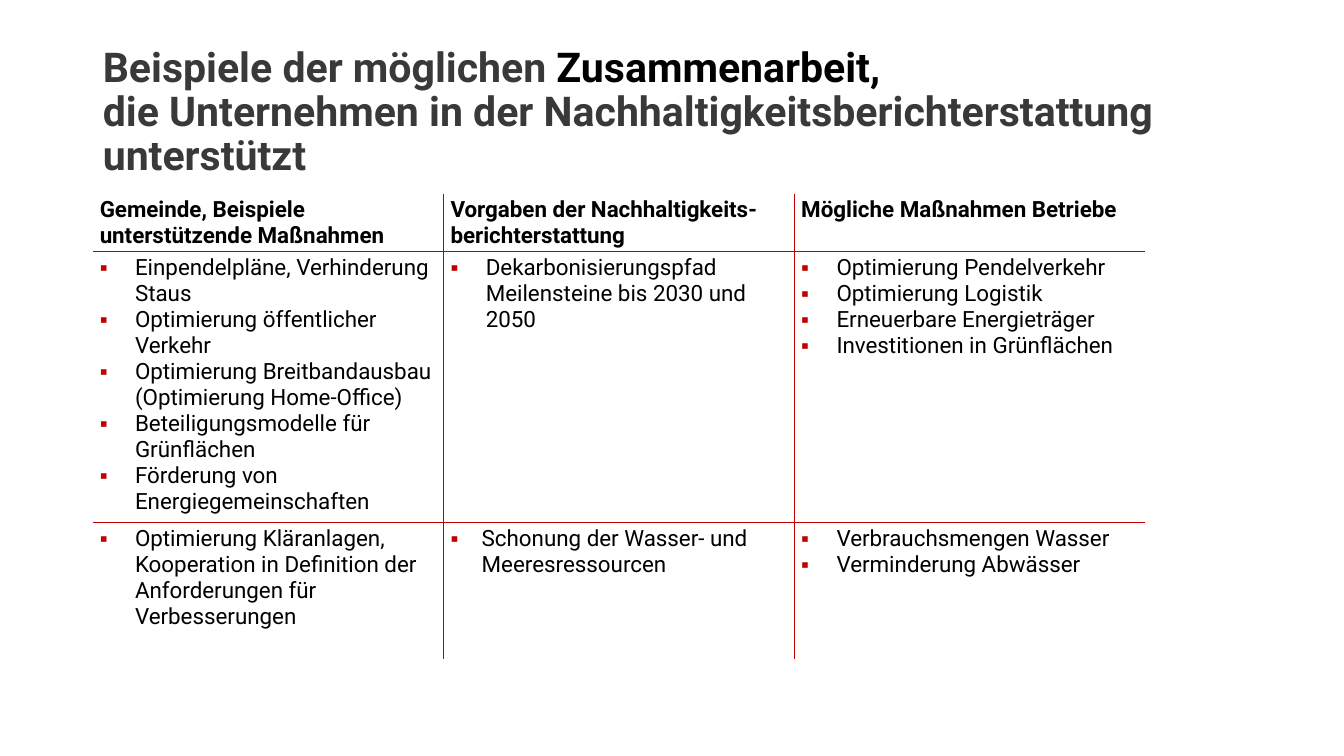
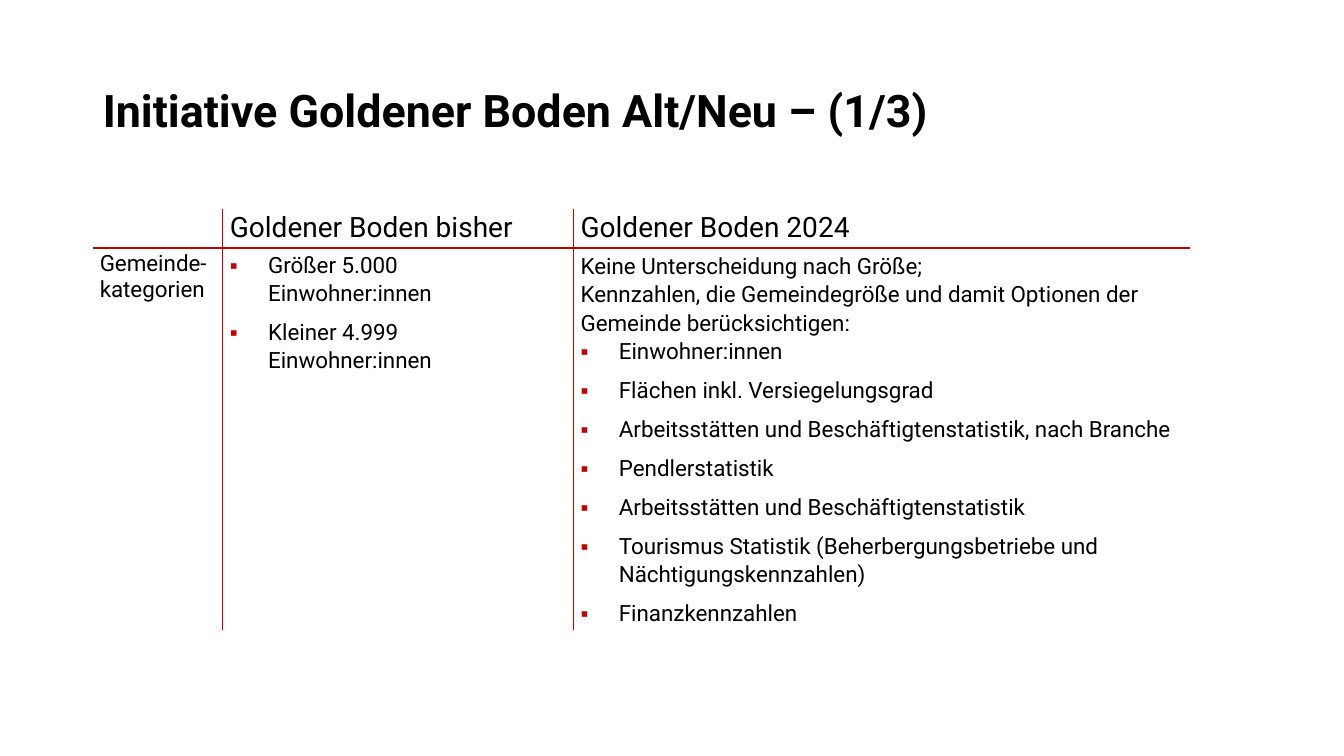
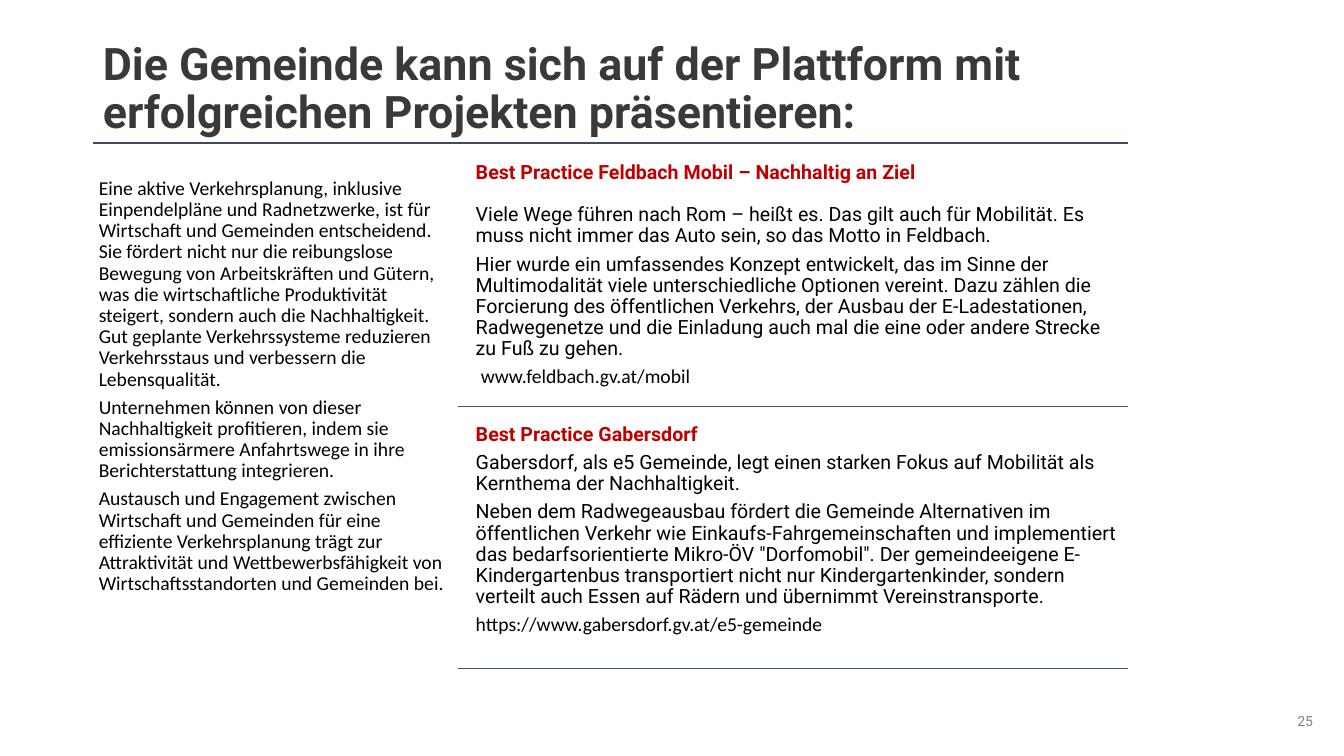
import dataclasses
import functools

import lxml.etree
import pptx
import pptx.dml.color
import pptx.enum.shapes
import pptx.enum.text
import pptx.oxml.ns
import pptx.util

RGB = pptx.dml.color.RGBColor
BLACK = RGB(0x00, 0x00, 0x00)
DARK = RGB(0x3B, 0x38, 0x38)
RED = RGB(0xC0, 0x00, 0x00)
GREY = RGB(0x80, 0x80, 0x80)
SLATE = RGB(0x3E, 0x4C, 0x60)
BLUE = RGB(0x44, 0x54, 0x6A)

WIDE = pptx.util.Inches(13.33)
HIGH = pptx.util.Inches(7.5)
LEFT = 6.9  # shared left edge, in percent of the width
ANCHOR = pptx.enum.text.MSO_ANCHOR
ALIGN = pptx.enum.text.PP_ALIGN
qn = pptx.oxml.ns.qn


@dataclasses.dataclass(frozen=True)
class Para:
    text: str
    size: float = 16
    color: RGB = BLACK
    bold: bool = False
    font: str = "Roboto"
    lead: float = 1
    after: float = 0
    indent: float = 0
    bullet: bool = False
    align: ALIGN = ALIGN.LEFT
    accent: str = ""  # closing words in black


@dataclasses.dataclass(frozen=True)
class Box:
    """Place in percent of the slide's width and height."""
    left: float
    top: float
    width: float
    height: float

    def place(self) -> tuple:
        return across(self.left), down(self.top), across(self.width), down(self.height)


@dataclasses.dataclass(frozen=True)
class Grid:
    top: float
    cols: tuple
    rows: tuple
    cells: tuple


def across(share: float) -> int:
    return round(WIDE * share / 100)


def down(share: float) -> int:
    return round(HIGH * share / 100)


# Paragraph styles
Head = functools.partial(Para, bold=True, lead=0.9)
Point = functools.partial(Para, bullet=True, indent=0.35)
Loose = functools.partial(Para, bullet=True, indent=0.38, lead=1.07, after=8)
Note = functools.partial(Para, size=14, lead=0.9, after=5)
Plain = functools.partial(Note, font="Calibri")
Case = functools.partial(Note, color=RED, bold=True)


def mark(par, indent: float, bullet: bool) -> None:
    props = par._p.get_or_add_pPr()
    step = pptx.util.Inches(indent)
    props.set("marL", str(step))
    if bullet:
        props.set("indent", str(-step))
        tint = lxml.etree.SubElement(props, qn("a:buClr"))
        lxml.etree.SubElement(tint, qn("a:srgbClr"), val=str(RED))
        lxml.etree.SubElement(props, qn("a:buFont"), typeface="Arial")
        lxml.etree.SubElement(props, qn("a:buChar"), char="▪")


def write(frame, paras: tuple) -> None:
    for num, item in enumerate(paras):
        par = frame.add_paragraph() if num else frame.paragraphs[0]
        par.text = item.text
        if item.accent:
            par.add_run().text = item.accent
        if item.indent:
            mark(par, item.indent, item.bullet)
        par.alignment = item.align
        par.line_spacing = item.lead
        par.space_after = pptx.util.Pt(item.after)
        for pos, run in enumerate(par.runs):
            run.font.size = pptx.util.Pt(item.size)
            run.font.name = item.font
            run.font.bold = item.bold
            run.font.color.rgb = BLACK if pos else item.color


def start(deck, top: float, *paras: Para):
    """Add a title-only slide with its title set."""
    slide = deck.slides.add_slide(deck.slide_layouts[5])
    head = slide.shapes.title
    head.left, head.top, head.width, head.height = Box(LEFT, top, 79.75, 19.33).place()
    frame = head.text_frame
    frame.auto_size = pptx.enum.text.MSO_AUTO_SIZE.NONE
    frame.vertical_anchor = ANCHOR.MIDDLE
    write(frame, paras)
    return slide


def text(slide, box: Box, paras: tuple, inset: float = 0.06, anchor=ANCHOR.TOP) -> None:
    frame = slide.shapes.add_textbox(*box.place()).text_frame
    frame.word_wrap = True
    frame.vertical_anchor = anchor
    frame.margin_left = frame.margin_right = pptx.util.Inches(inset)
    frame.margin_top = frame.margin_bottom = pptx.util.Inches(inset)
    write(frame, paras)


def rule(slide, left: float, top: float, color: RGB) -> None:
    line = slide.shapes.add_connector(
        pptx.enum.shapes.MSO_CONNECTOR.STRAIGHT,
        across(left), down(top), across(83.95), down(top))
    line.line.color.rgb = color
    line.line.width = pptx.util.Pt(1)
    lxml.etree.SubElement(line._element.spPr, qn("a:effectLst"))


def edge(cell, sides: dict) -> None:
    props = cell._tc.get_or_add_tcPr()
    for side, shown in sides.items():
        line = lxml.etree.SubElement(props, qn("a:ln" + side), w=str(pptx.util.Pt(1)))
        if shown:
            fill = lxml.etree.SubElement(line, qn("a:solidFill"))
            lxml.etree.SubElement(fill, qn("a:srgbClr"), val=str(RED))
        else:
            lxml.etree.SubElement(line, qn("a:noFill"))


def table(slide, grid: Grid) -> None:
    """Draw a table ruled only between its cells."""
    wide, high = len(grid.cols), len(grid.rows)
    box = Box(LEFT, grid.top, sum(grid.cols), sum(grid.rows))
    tab = slide.shapes.add_table(high, wide, *box.place()).table
    tab.first_row = tab.horz_banding = False
    for col, share in zip(tab.columns, grid.cols):
        col.width = across(share)
    for row, share in zip(tab.rows, grid.rows):
        row.height = down(share)
    for y, line in enumerate(grid.cells):
        for x, paras in enumerate(line):
            cell = tab.cell(y, x)
            cell.margin_left = cell.margin_right = pptx.util.Inches(0.07)
            cell.margin_top = cell.margin_bottom = pptx.util.Inches(0.03)
            edge(cell, {"L": x > 0, "R": x < wide - 1, "T": y > 0, "B": y < high - 1})
            cell.fill.background()
            write(cell.text_frame, paras)


def each(style, *lines: str) -> tuple:
    return tuple(style(line) for line in lines)


# Contents of the tables
WORK = Grid(25.6, (26.1,) * 3, (7.47, 35.87, 18), (
    tuple((Para(name, bold=True),) for name in (
        "Gemeinde, Beispiele unterstützende Maßnahmen",
        "Vorgaben der Nachhaltigkeits-berichterstattung",
        "Mögliche Maßnahmen Betriebe")),
    (each(Point,
          "Einpendelpläne, Verhinderung Staus",
          "Optimierung öffentlicher Verkehr",
          "Optimierung Breitbandausbau (Optimierung Home-Office)",
          "Beteiligungsmodelle für Grünflächen",
          "Förderung von Energiegemeinschaften"),
     each(Point, "Dekarbonisierungspfad Meilensteine bis 2030 und 2050"),
     each(Point,
          "Optimierung Pendelverkehr",
          "Optimierung Logistik",
          "Erneuerbare Energieträger",
          "Investitionen in Grünflächen")),
    (each(Point, "Optimierung Kläranlagen, Kooperation in Definition der "
                 "Anforderungen für Verbesserungen"),
     (Point("Schonung der Wasser- und Meeresressourcen", indent=0.31),),
     each(Point, "Verbrauchsmengen Wasser", "Verminderung Abwässer")),
))

SOIL = Grid(27.6, (9.68, 26.1, 45.9), (5.2, 50.4), (
    ((), (Para("Goldener Boden bisher", 20),), (Para("Goldener Boden 2024", 20),)),
    ((Para("Gemeinde-kategorien"),),
     each(Loose, "Größer 5.000 Einwohner:innen", "Kleiner 4.999 Einwohner:innen"),
     each(functools.partial(Para, lead=1.1),
          "Keine Unterscheidung nach Größe;",
          "Kennzahlen, die Gemeindegröße und damit Optionen der Gemeinde "
          "berücksichtigen:")
     + each(Loose,
            "Einwohner:innen",
            "Flächen inkl. Versiegelungsgrad",
            "Arbeitsstätten und Beschäftigtenstatistik, nach Branche",
            "Pendlerstatistik",
            "Arbeitsstätten und Beschäftigtenstatistik",
            "Tourismus Statistik (Beherbergungsbetriebe und Nächtigungskennzahlen)",
            "Finanzkennzahlen")),
))

# Contents of the project slide
INTRO = each(
    Plain,
    "Eine aktive Verkehrsplanung, inklusive Einpendelpläne und Radnetzwerke, ist für "
    "Wirtschaft und Gemeinden entscheidend. Sie fördert nicht nur die reibungslose "
    "Bewegung von Arbeitskräften und Gütern, was die wirtschaftliche Produktivität "
    "steigert, sondern auch die Nachhaltigkeit. Gut geplante Verkehrssysteme reduzieren "
    "Verkehrsstaus und verbessern die Lebensqualität.",
    "Unternehmen können von dieser Nachhaltigkeit profitieren, indem sie emissionsärmere "
    "Anfahrtswege in ihre Berichterstattung integrieren.",
    "Austausch und Engagement zwischen Wirtschaft und Gemeinden für eine effiziente "
    "Verkehrsplanung trägt zur Attraktivität und Wettbewerbsfähigkeit von "
    "Wirtschaftsstandorten und Gemeinden bei.")

CASES = (
    (Case("Best Practice Feldbach Mobil – Nachhaltig an Ziel", after=15.2),
     Note("Viele Wege führen nach Rom – heißt es. Das gilt auch für Mobilität. Es muss "
          "nicht immer das Auto sein, so das Motto in Feldbach."),
     Note("Hier wurde ein umfassendes Konzept entwickelt, das im Sinne der "
          "Multimodalität viele unterschiedliche Optionen vereint. Dazu zählen die "
          "Forcierung des öffentlichen Verkehrs, der Ausbau der E-Ladestationen, "
          "Radwegenetze und die Einladung auch mal die eine oder andere Strecke zu Fuß "
          "zu gehen."),
     Plain("www.feldbach.gv.at/mobil", indent=0.05)),
    (Case("Best Practice Gabersdorf"),
     Note("Gabersdorf, als e5 Gemeinde, legt einen starken Fokus auf Mobilität als "
          "Kernthema der Nachhaltigkeit."),
     Note("Neben dem Radwegeausbau fördert die Gemeinde Alternativen im öffentlichen "
          "Verkehr wie Einkaufs-Fahrgemeinschaften und implementiert das "
          "bedarfsorientierte Mikro-ÖV \"Dorfomobil\". Der gemeindeeigene "
          "E-Kindergartenbus transportiert nicht nur Kindergartenkinder, sondern "
          "verteilt auch Essen auf Rädern und übernimmt Vereinstransporte."),
     Plain("https://www.gabersdorf.gv.at/e5-gemeinde")),
)


def main() -> None:
    deck = pptx.Presentation()
    deck.slide_width, deck.slide_height = WIDE, HIGH

    # Cooperation
    slide = start(
        deck, 5.33,
        Head("Beispiele der möglichen ", 29.3, DARK, accent="Zusammenarbeit,"),
        Head("die Unternehmen in der Nachhaltigkeitsberichterstattung unterstützt",
             29.3, DARK))
    table(slide, WORK)

    # Initiative, old and new
    slide = start(deck, 5.33, Head("Initiative Goldener Boden Alt/Neu – (1/3)", 32))
    table(slide, SOIL)

    # Projects
    slide = start(deck, 2.27, Head("Die Gemeinde kann sich auf der Plattform mit "
                                   "erfolgreichen Projekten präsentieren:", 32, DARK))
    rule(slide, LEFT, 18.93, SLATE)
    text(slide, Box(LEFT, 22.8, 27.15, 67.33), INTRO)
    for num, case in enumerate(CASES):
        box = Box(34.95, 20.67 + num * 34.67, 49, 33.07)
        text(slide, box, case)
        rule(slide, 34.05, box.top + box.height, BLUE)
    text(slide, Box(88.6, 92.67, 9.83, 5.33),
         (Para("25", 10, GREY, align=ALIGN.RIGHT),), 0.1, ANCHOR.MIDDLE)

    deck.save("out.pptx")


if __name__ == "__main__":
    main()
